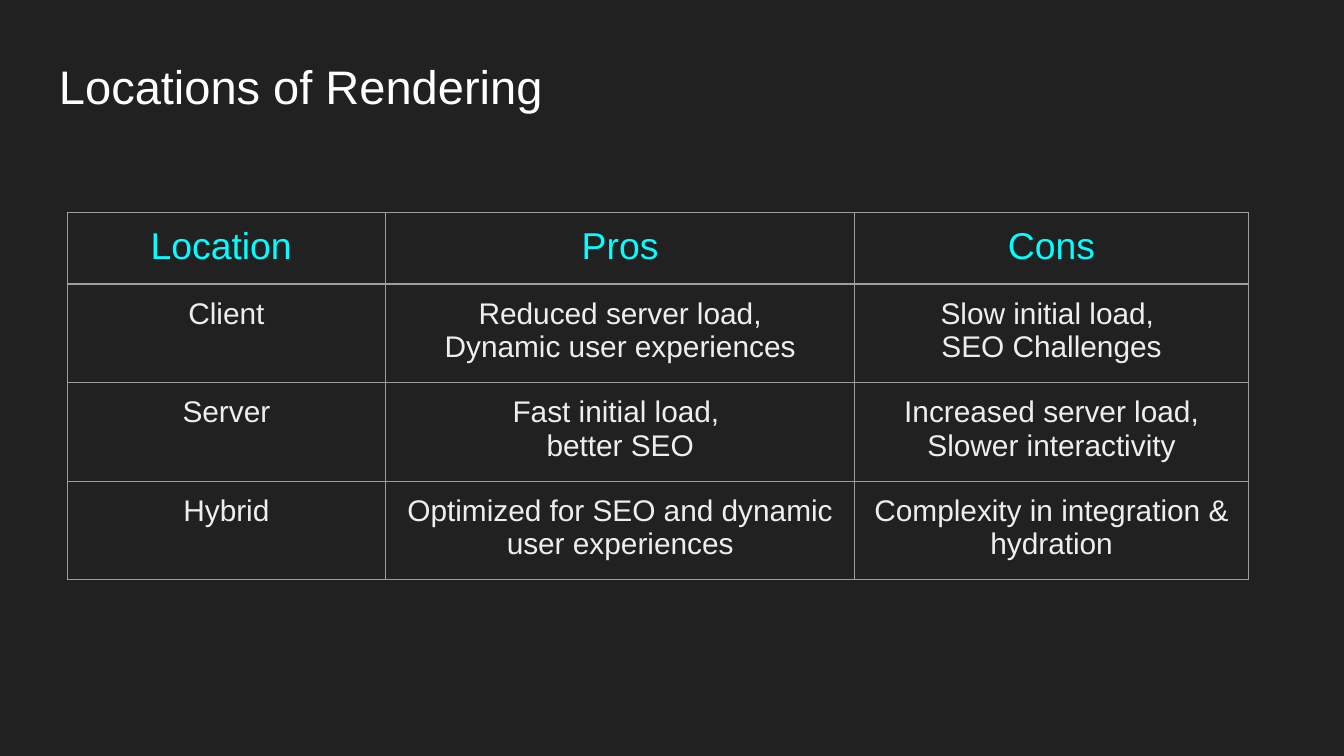
from dataclasses import dataclass

from lxml.etree import SubElement
from pptx import Presentation
from pptx.dml.color import RGBColor
from pptx.enum.text import MSO_ANCHOR, PP_ALIGN
from pptx.oxml.ns import qn
from pptx.util import Inches, Pt


@dataclass(frozen=True)
class Theme:
    """Colours, type sizes and spacing of the slide."""
    font: str = "Arial"
    background: str = "212121"
    title: str = "FFFFFF"
    header: str = "00FFFF"
    body: str = "EEEEEE"
    border: str = "9E9E9E"
    title_size: float = 25.2
    header_size: float = 20
    body_size: float = 16
    border_width: float = 0.75
    inset: float = 0.1


THEME = Theme()
COLUMN_WIDTHS = [2.37, 3.49, 2.93]
ROW_HEIGHTS = [0.49, 0.42, 0.42, 0.42]
ROWS = [
    ["Location ", "Pros", "Cons"],
    ["Client", "Reduced server load,\nDynamic user experiences",
     "Slow initial load, \vSEO Challenges"],
    ["Server", "Fast initial load, \nbetter SEO",
     "Increased server load,\nSlower interactivity"],
    ["Hybrid", "Optimized for SEO and dynamic user experiences",
     "Complexity in integration & hydration"],
]


def write_text(tf, text, size, color, align):
    """Write paragraphs split at newlines, with line breaks at vertical tabs."""
    for i, paragraph in enumerate(text.split("\n")):
        p = tf.add_paragraph() if i else tf.paragraphs[0]
        p.alignment = align
        for j, line in enumerate(paragraph.split("\v")):
            if j:
                p.add_line_break()
            r = p.add_run()
            r.text = line
            r.font.name = THEME.font
            r.font.size = Pt(size)
            r.font.color.rgb = RGBColor.from_string(color)


def set_insets(box):
    """Give a text frame or cell equal margins on all sides."""
    box.margin_left = box.margin_right = Inches(THEME.inset)
    box.margin_top = box.margin_bottom = Inches(THEME.inset)


def set_borders(cell):
    """Draw a thin solid line on the four sides of a cell."""
    props = cell._tc.get_or_add_tcPr()
    for i, side in enumerate(("lnL", "lnR", "lnT", "lnB")):
        ln = props.makeelement(qn(f"a:{side}"), {"w": str(Pt(THEME.border_width))})
        fill = SubElement(ln, qn("a:solidFill"))
        SubElement(fill, qn("a:srgbClr"), val=THEME.border)
        props.insert(i, ln)


def add_title(s, text, left, top, width, height):
    """Place the slide title in the given box."""
    sp = s.shapes.add_textbox(Inches(left), Inches(top), Inches(width), Inches(height))
    tf = sp.text_frame
    tf.word_wrap = True
    tf.vertical_anchor = MSO_ANCHOR.MIDDLE
    set_insets(tf)
    write_text(tf, text, THEME.title_size, THEME.title, PP_ALIGN.LEFT)


def add_comparison(s, rows, left, top):
    """Place the table of rendering locations at the given corner."""
    table = s.shapes.add_table(
        len(rows), len(COLUMN_WIDTHS), Inches(left), Inches(top),
        Inches(sum(COLUMN_WIDTHS)), Inches(sum(ROW_HEIGHTS))).table
    table.horz_banding = False
    table.first_row = False
    for column, width in zip(table.columns, COLUMN_WIDTHS):
        column.width = Inches(width)
    for i, (row, height) in enumerate(zip(table.rows, ROW_HEIGHTS)):
        row.height = Inches(height)
        size, color = ((THEME.body_size, THEME.body) if i
                       else (THEME.header_size, THEME.header))
        for cell, text in zip(row.cells, rows[i]):
            cell.fill.background()
            set_borders(cell)
            set_insets(cell)
            write_text(cell.text_frame, text, size, color, PP_ALIGN.CENTER)


def main():
    """Build and save the presentation."""
    prs = Presentation()
    prs.slide_width = Inches(10)
    prs.slide_height = prs.slide_width * 9 // 16
    s = prs.slides.add_slide(prs.slide_layouts[6])
    s.background.fill.solid()
    s.background.fill.fore_color.rgb = RGBColor.from_string(THEME.background)
    add_title(s, "Locations of Rendering", 0.34, 0.32, 9.32, 0.63)
    add_comparison(s, ROWS, 0.5, 1.58)
    prs.save("out.pptx")


if __name__ == "__main__":
    main()
